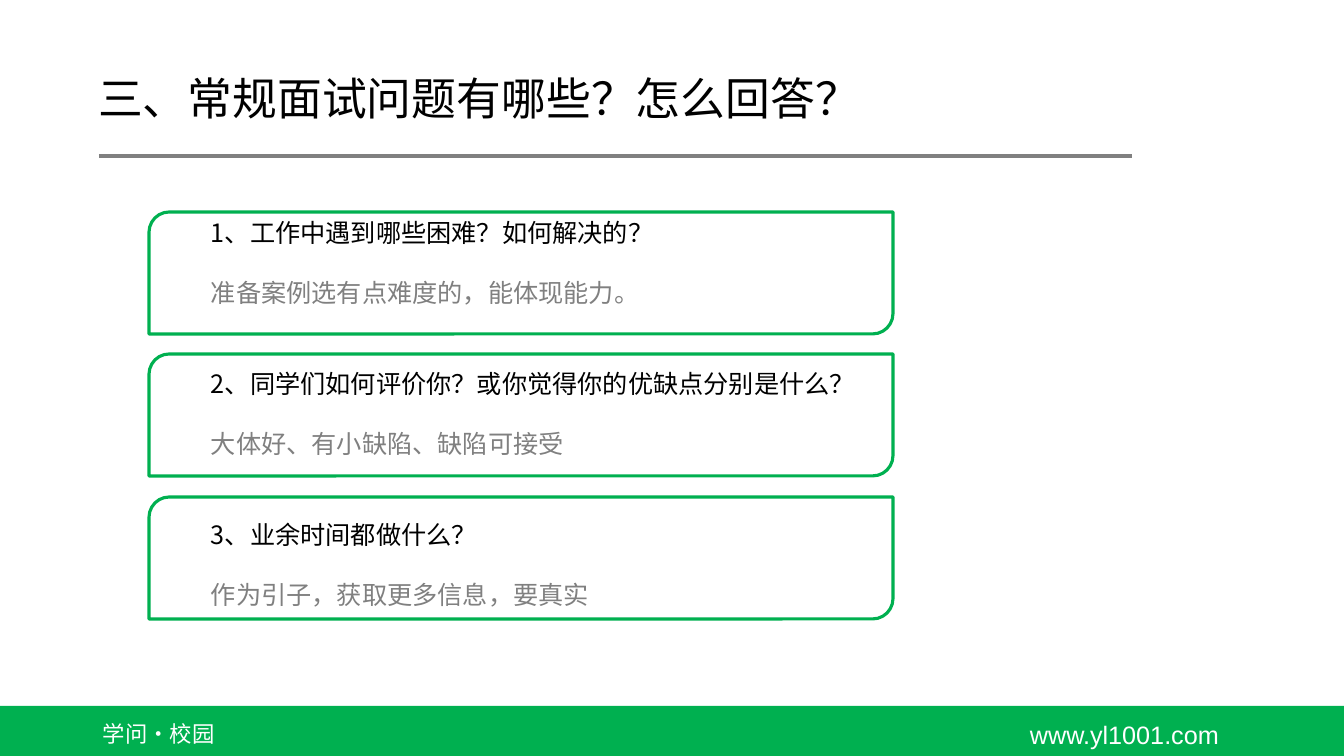
from dataclasses import dataclass

from lxml import etree
from pptx import Presentation
from pptx import util as u
from pptx.dml.color import RGBColor
from pptx.enum import shapes, text
from pptx.oxml.ns import qn

SCALE = 914400 / 100.8
HUES = {"green": "00B050", "grey": "808080", "black": "000000", "white": "FFFFFF"}
CJK = "Noto Sans CJK SC"
PITCH = 21.6


@dataclass
class Box:
    left: int
    top: int
    width: int
    height: int


@dataclass
class Line:
    words: str
    size: int
    hue: str
    face: str = CJK
    gap: float = 0
    pitch: float = 0


def px(count: int) -> u.Emu:
    return u.Emu(round(count * SCALE))


def color(name: str) -> RGBColor:
    return RGBColor.from_string(HUES[name])


def assign(item, values: dict) -> None:
    for name, value in values.items():
        setattr(item, name, value)


def place(box: Box) -> list[u.Emu]:
    return [px(n) for n in (box.left, box.top, box.width, box.height)]


def write(frame, lines: list[Line], anchor=text.MSO_ANCHOR.TOP) -> None:
    assign(frame, {"word_wrap": True, "vertical_anchor": anchor})
    for index, line in enumerate(lines):
        para = frame.add_paragraph() if index else frame.paragraphs[0]
        assign(para, {
            "alignment": text.PP_ALIGN.LEFT,
            "space_before": u.Pt(line.gap),
            "line_spacing": u.Pt(line.pitch) if line.pitch else 1.0,
        })
        run = para.add_run()
        run.text = line.words
        assign(run.font, {"size": u.Pt(line.size), "name": line.face})
        run.font.color.rgb = color(line.hue)
        east = etree.SubElement(run.font._element, qn("a:ea"))
        east.set("typeface", CJK)


def label(slide, box: Box, lines: list[Line]) -> None:
    write(slide.shapes.add_textbox(*place(box)).text_frame, lines)


def panel(slide, kind, box: Box, fill: str = "", edge: str = "") -> None:
    shape = slide.shapes.add_shape(kind, *place(box))
    shape.shadow.inherit = False
    for part, hue in ((shape.fill, fill), (shape.line.fill, edge)):
        if hue:
            part.solid()
            part.fore_color.rgb = color(hue)
        else:
            part.background()
    if edge:
        shape.line.width = u.Pt(2.25)


def rule(slide, left: int, right: int, top: int) -> None:
    line = slide.shapes.add_connector(
        shapes.MSO_CONNECTOR.STRAIGHT, px(left), px(top), px(right), px(top))
    line.line.width = u.Pt(2.25)
    line.line.color.rgb = color("grey")
    etree.SubElement(line._element.spPr, qn("a:effectLst"))


TOPICS = [
    ("1、工作中遇到哪些困难？如何解决的？", "准备案例选有点难度的，能体现能力。"),
    ("2、同学们如何评价你？或你觉得你的优缺点分别是什么？", "大体好、有小缺陷、缺陷可接受"),
    ("3、业余时间都做什么？", "作为引子，获取更多信息，要真实"),
]


def main() -> None:
    deck = Presentation()
    assign(deck, {"slide_width": px(1344), "slide_height": px(756)})
    slide = deck.slides.add_slide(deck.slide_layouts[5])

    panel(slide, shapes.MSO_SHAPE.RECTANGLE, Box(0, 706, 1344, 54), fill="green")
    label(slide, Box(93, 715, 519, 39), [Line("学问·校园", 16, "white")])
    label(slide, Box(1020, 714, 278, 40), [Line("www.yl1001.com", 18, "white", "Arial")])

    title = slide.shapes.title
    spots = place(Box(88, 40, 1057, 121))
    assign(title, dict(zip(("left", "top", "width", "height"), spots)))
    write(title.text_frame,
          [Line("三、常规面试问题有哪些？怎么回答？", 32, "black", "Arial")],
          text.MSO_ANCHOR.MIDDLE)
    title.text_frame.paragraphs[0].line_spacing = 0.9
    rule(slide, 99, 1132, 156)

    lines = []
    for index, (ask, reply) in enumerate(TOPICS):
        lines.append(Line(ask, 18, "black", gap=2 * PITCH if index else 0, pitch=PITCH))
        lines.append(Line(reply, 18, "grey", gap=PITCH, pitch=PITCH))
    label(slide, Box(201, 212, 684, 407), lines)
    for index in range(len(TOPICS)):
        panel(slide, shapes.MSO_SHAPE.ROUND_2_DIAG_RECTANGLE,
              Box(149, 212 + index * 285 // 2, 744, 122), edge="green")

    deck.save("out.pptx")


if __name__ == "__main__":
    main()
